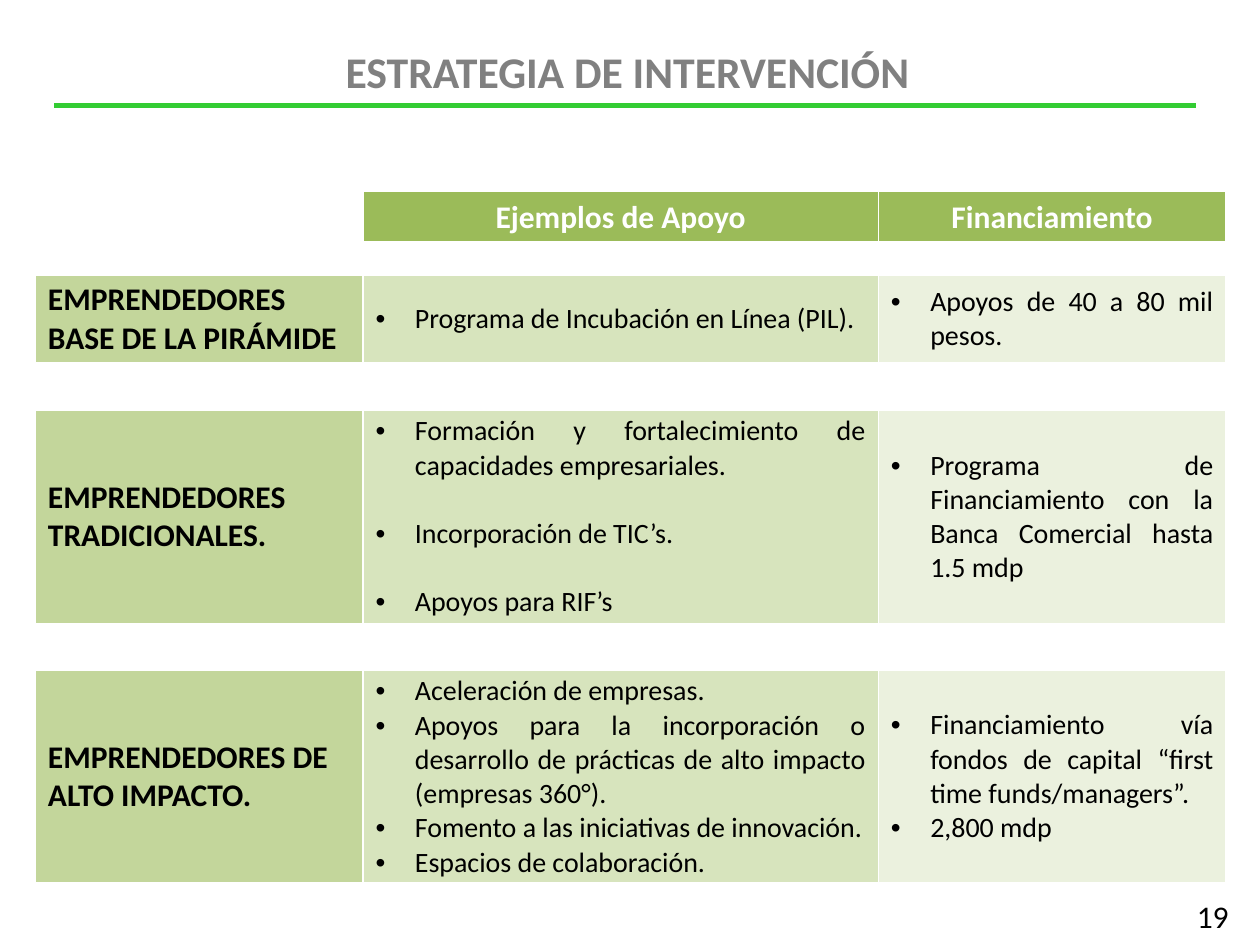
"""Build the intervention strategy slide with its support and financing table."""
from dataclasses import dataclass

from lxml.etree import SubElement
from pptx import Presentation
from pptx.dml.color import RGBColor as Rgb
from pptx.enum.shapes import MSO_CONNECTOR as Connector
from pptx.enum.text import MSO_ANCHOR as Anchor, PP_ALIGN as Align
from pptx.oxml import parse_xml
from pptx.oxml.ns import nsdecls, qn
from pptx.util import Pt


@dataclass(frozen=True)
class Theme:
    font: str = "Calibri"
    title: str = "808080"
    rule: str = "33CC33"
    header: str = "9BBB59"
    group: str = "C3D69B"
    support: str = "D7E4BD"
    funding: str = "EBF1DE"
    paper: str = "FFFFFF"
    ink: str = "000000"
    title_size: float = 25
    heading_size: float = 18
    body_size: float = 16
    gap_size: float = 8


@dataclass(frozen=True)
class TextStyle:
    size: float
    color: str
    bold: bool = False
    align: Align = Align.LEFT
    bullet: bool = False
    spacing: float = 0


@dataclass(frozen=True)
class Band:
    height: float
    group: tuple[str, ...]
    support: tuple[str, ...]
    funding: tuple[str, ...]
    gap_above: float
    support_spacing: float = 0


THEME = Theme()
COLUMN_WIDTHS = (187.2, 294.5, 198.7)
HEADER_HEIGHT = 29.5
HEADINGS = ("", "Ejemplos de Apoyo", "Financiamiento")
BULLET_INDENT = 22.5
BANDS = (
    Band(50, ("EMPRENDEDORES", "BASE DE LA PIRÁMIDE"),
         ("Programa de Incubación en Línea (PIL).",),
         ("Apoyos de 40 a 80 mil pesos.",), gap_above=18.5),
    Band(122, ("EMPRENDEDORES TRADICIONALES.",),
         ("Formación y fortalecimiento de capacidades empresariales.",
          "Incorporación de TIC’s.", "Apoyos para RIF’s"),
         ("Programa de Financiamiento con la Banca Comercial hasta 1.5 mdp",),
         gap_above=27, support_spacing=19.5),
    Band(121, ("EMPRENDEDORES DE", "ALTO IMPACTO."),
         ("Aceleración de empresas.",
          "Apoyos para la incorporación o desarrollo de prácticas de alto impacto (empresas 360°).",
          "Fomento a las iniciativas de innovación.", "Espacios de colaboración."),
         ("Financiamiento vía fondos de capital “first time funds/managers”.", "2,800 mdp"),
         gap_above=27),
)


def write(frame, lines: tuple[str, ...], style: TextStyle) -> None:
    """Write one paragraph per line in the given style."""
    for index, line in enumerate(lines):
        paragraph = frame.add_paragraph() if index else frame.paragraphs[0]
        paragraph.alignment = style.align
        if index and style.spacing:
            paragraph.space_before = Pt(style.spacing)
        if style.bullet:
            properties = paragraph._p.get_or_add_pPr()
            properties.set("marL", str(Pt(BULLET_INDENT)))
            properties.set("indent", str(-Pt(BULLET_INDENT)))
            SubElement(properties, qn("a:buFont")).set("typeface", "Arial")
            SubElement(properties, qn("a:buChar")).set("char", "•")
        run = paragraph.add_run()
        run.text = line
        run.font.name = THEME.font
        run.font.size = Pt(style.size)
        run.font.bold = style.bold
        run.font.color.rgb = Rgb.from_string(style.color)


def add_label(slide, box: tuple[float, ...], text: str, style: TextStyle) -> None:
    """Add a wrapping text box."""
    frame = slide.shapes.add_textbox(*map(Pt, box)).text_frame
    frame.word_wrap = True
    write(frame, (text,), style)


def add_rule(slide, left: float, right: float, top: float) -> None:
    """Draw the line under the title."""
    rule = slide.shapes.add_connector(Connector.STRAIGHT, Pt(left), Pt(top), Pt(right), Pt(top))
    rule.line.color.rgb = Rgb.from_string(THEME.rule)
    rule.line.width = Pt(3)
    SubElement(rule._element.spPr, qn("a:effectLst"))


def style_cell(cell, fill: str, top_edge: float = 1, bottom_edge: float = 1, inset: float = 2) -> None:
    """Set the fill, white borders and vertical margins of a cell."""
    cell.fill.solid()
    cell.fill.fore_color.rgb = Rgb.from_string(fill)
    cell.margin_top = cell.margin_bottom = Pt(inset)
    cell.vertical_anchor = Anchor.MIDDLE
    edges = (("lnL", 1), ("lnR", 1), ("lnT", top_edge), ("lnB", bottom_edge))
    for index, (tag, width) in enumerate(edges):
        cell._tc.get_or_add_tcPr().insert(index, parse_xml(
            f'<a:{tag} {nsdecls("a")} w="{Pt(width)}"><a:solidFill>'
            f'<a:srgbClr val="{THEME.paper}"/></a:solidFill></a:{tag}>'))


def shrink_empty(cell) -> None:
    """Keep an empty cell from stretching its row."""
    end = SubElement(cell.text_frame.paragraphs[0]._p, qn("a:endParaRPr"))
    end.set("sz", str(int(THEME.gap_size * 100)))


def add_strategy_table(slide, left: float, top: float) -> None:
    """Add the header and the entrepreneur bands, each below a white gap."""
    heights = [HEADER_HEIGHT]
    for band in BANDS:
        heights += [band.gap_above, band.height]
    table = slide.shapes.add_table(
        len(heights), len(COLUMN_WIDTHS), Pt(left), Pt(top),
        Pt(sum(COLUMN_WIDTHS)), Pt(sum(heights))).table
    table.first_row = table.horz_banding = False
    for column, width in zip(table.columns, COLUMN_WIDTHS):
        column.width = Pt(width)
    for row, height in zip(table.rows, heights):
        row.height = Pt(height)

    heading = TextStyle(THEME.heading_size, THEME.paper, bold=True, align=Align.CENTER)
    for cell, text in zip(table.rows[0].cells, HEADINGS):
        style_cell(cell, THEME.header if text else THEME.paper, bottom_edge=3, inset=3.6)
        if text:
            write(cell.text_frame, (text,), heading)
        else:
            shrink_empty(cell)

    group = TextStyle(THEME.heading_size, THEME.ink, bold=True)
    for index, band in enumerate(BANDS):
        for cell in table.rows[2 * index + 1].cells:
            style_cell(cell, THEME.paper, top_edge=1 if index else 3)
            shrink_empty(cell)
        support = TextStyle(THEME.body_size, THEME.ink, align=Align.JUSTIFY,
                            bullet=True, spacing=band.support_spacing)
        funding = TextStyle(THEME.body_size, THEME.ink, align=Align.JUSTIFY, bullet=True)
        contents = ((band.group, THEME.group, group),
                    (band.support, THEME.support, support),
                    (band.funding, THEME.funding, funding))
        for cell, (lines, fill, style) in zip(table.rows[2 * index + 2].cells, contents):
            style_cell(cell, fill)
            write(cell.text_frame, lines, style)


def main() -> None:
    """Build and save the slide."""
    deck = Presentation()
    deck.slide_width, deck.slide_height = Pt(720), Pt(540)
    slide = deck.slides.add_slide(deck.slide_layouts[6])
    add_rule(slide, left=31, right=683.5, top=60.5)
    add_label(slide, (32.4, 22.3, 652.3, 37.4), "ESTRATEGIA DE INTERVENCIÓN",
              TextStyle(THEME.title_size, THEME.title, bold=True, align=Align.CENTER))
    add_strategy_table(slide, left=20.2, top=109.4)
    add_label(slide, (541.4, 509, 167.8, 28.8), "19",
              TextStyle(THEME.heading_size, THEME.ink, align=Align.RIGHT))
    deck.save("out.pptx")


if __name__ == "__main__":
    main()
